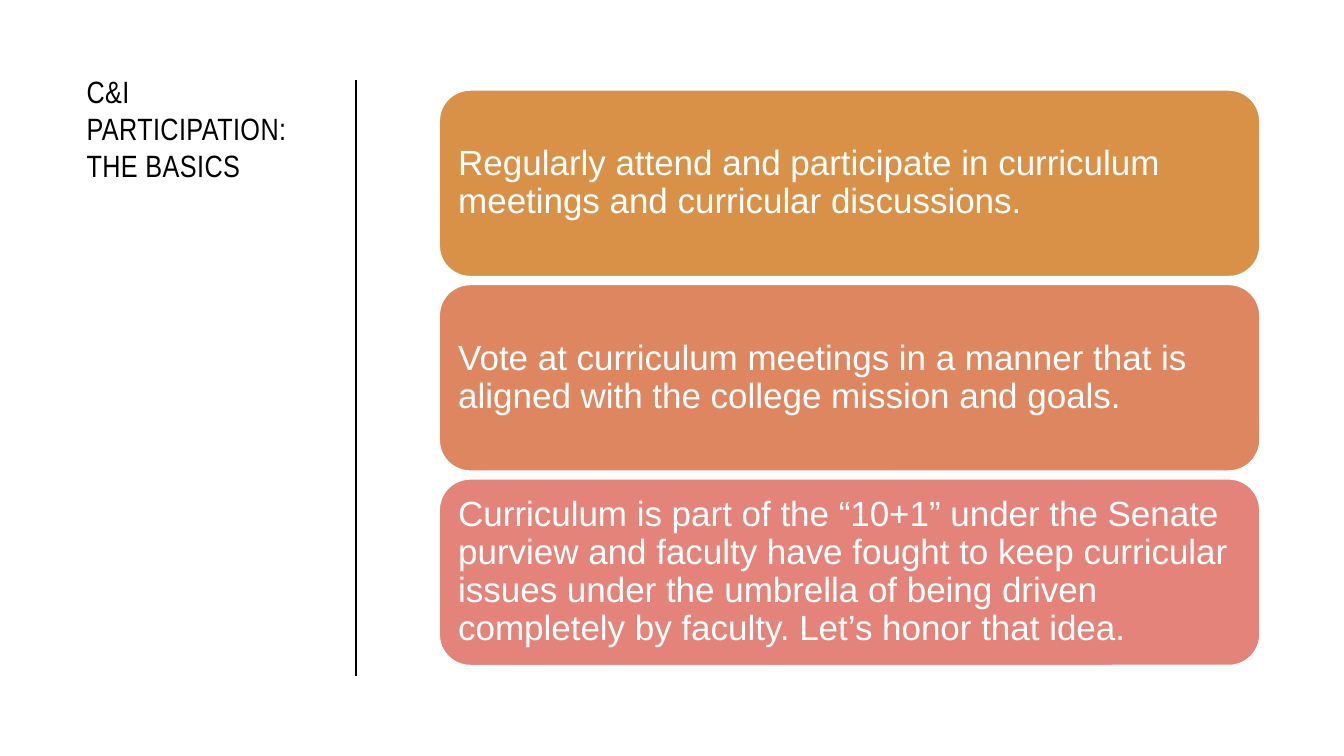
"""Build the slide on the basics of curriculum committee participation."""
from dataclasses import dataclass
from typing import Any

from lxml.etree import SubElement
from pptx import Presentation
from pptx.dml.color import RGBColor
from pptx.enum.shapes import MSO_CONNECTOR as Connector, MSO_SHAPE as Shape
from pptx.enum.text import MSO_ANCHOR as Anchor, MSO_AUTO_SIZE as AutoSize, PP_ALIGN as Align
from pptx.oxml.ns import qn
from pptx.util import Cm, Pt

COLOURS = {
    "ink": "000000",
    "paper": "FFFFFF",
    "amber": "D99147",
    "orange": "DE8660",
    "coral": "E38379",
}
FRAME_FORMAT = {
    "word_wrap": True,
    "auto_size": AutoSize.NONE,
    "margin_left": Cm(0.25),
    "margin_right": Cm(0.25),
    "margin_top": Cm(0.25),
    "margin_bottom": Cm(0.25),
}
CARD_LEFT, CARD_TOP, CARD_WIDTH, CARD_HEIGHT, CARD_PITCH = 11.07, 2.27, 20.68, 4.7, 4.9


@dataclass(frozen=True)
class Card:
    """A rounded box holding one recommendation."""

    text: str
    fill: str


CARDS = [
    Card("Regularly attend and participate in curriculum meetings and curricular discussions.", "amber"),
    Card("Vote at curriculum meetings in a manner that is aligned with the college mission and goals.", "orange"),
    Card(
        "Curriculum is part of the “10+1” under the Senate purview and faculty have fought to keep "
        "curricular issues under the umbrella of being driven completely by faculty. "
        "Let’s honor that idea.",
        "coral",
    ),
]


def colour(name: str) -> RGBColor:
    """Return a named colour."""
    return RGBColor.from_string(COLOURS[name])


def apply(target: Any, values: dict[str, Any]) -> None:
    """Set every given attribute on the target."""
    for name, value in values.items():
        setattr(target, name, value)


def write(box: Any, text: str, font: dict[str, Any], ink: str, **frame: Any) -> Any:
    """Write one left-aligned paragraph in the box and return its run."""
    apply(box.text_frame, FRAME_FORMAT | frame)
    para = box.text_frame.paragraphs[0]
    apply(para, {"alignment": Align.LEFT, "line_spacing": 0.9 if ink == "paper" else 1.0})
    span = para.add_run()
    span.text = text
    apply(span.font, font)
    span.font.color.rgb = colour(ink)
    return span


def add_title(page: Any) -> None:
    """Place and format the title placeholder."""
    box = page.shapes.title
    apply(box, {"left": Cm(1.93), "top": Cm(1.7), "width": Cm(6.05), "height": Cm(12.47)})
    span = write(
        box,
        "C&I PARTICIPATION: THE BASICS",
        {"name": "Arial Narrow", "size": Pt(22)},
        "ink",
        vertical_anchor=Anchor.TOP,
        margin_top=Cm(0.13),
        margin_bottom=Cm(0.13),
    )
    span.font._element.set("spc", "30")


def add_divider(page: Any) -> None:
    """Draw the vertical rule beside the title."""
    rule = page.shapes.add_connector(Connector.STRAIGHT, Cm(8.97), Cm(17.04), Cm(8.97), Cm(2.01))
    rule.line.color.rgb = colour("ink")
    rule.line.width = Pt(1)
    SubElement(rule._element.spPr, qn("a:effectLst"))


def add_card(page: Any, card: Card, row: int) -> None:
    """Draw one card in its row of the stack."""
    box = page.shapes.add_shape(
        Shape.ROUNDED_RECTANGLE,
        Cm(CARD_LEFT),
        Cm(CARD_TOP + row * CARD_PITCH),
        Cm(CARD_WIDTH),
        Cm(CARD_HEIGHT),
    )
    box.shadow.inherit = False
    box.fill.solid()
    box.fill.fore_color.rgb = colour(card.fill)
    box.line.color.rgb = colour("paper")
    box.line.width = Pt(1)
    write(box, card.text, {"name": "Arial", "size": Pt(25)}, "paper", vertical_anchor=Anchor.MIDDLE)


def main() -> None:
    """Build and save the deck."""
    deck = Presentation()
    apply(deck, {"slide_width": Cm(33.87), "slide_height": Cm(19.05)})
    page = deck.slides.add_slide(deck.slide_layouts.get_by_name("Title Only"))
    add_title(page)
    add_divider(page)
    for row, card in enumerate(CARDS):
        add_card(page, card, row)
    deck.save("out.pptx")


if __name__ == "__main__":
    main()
